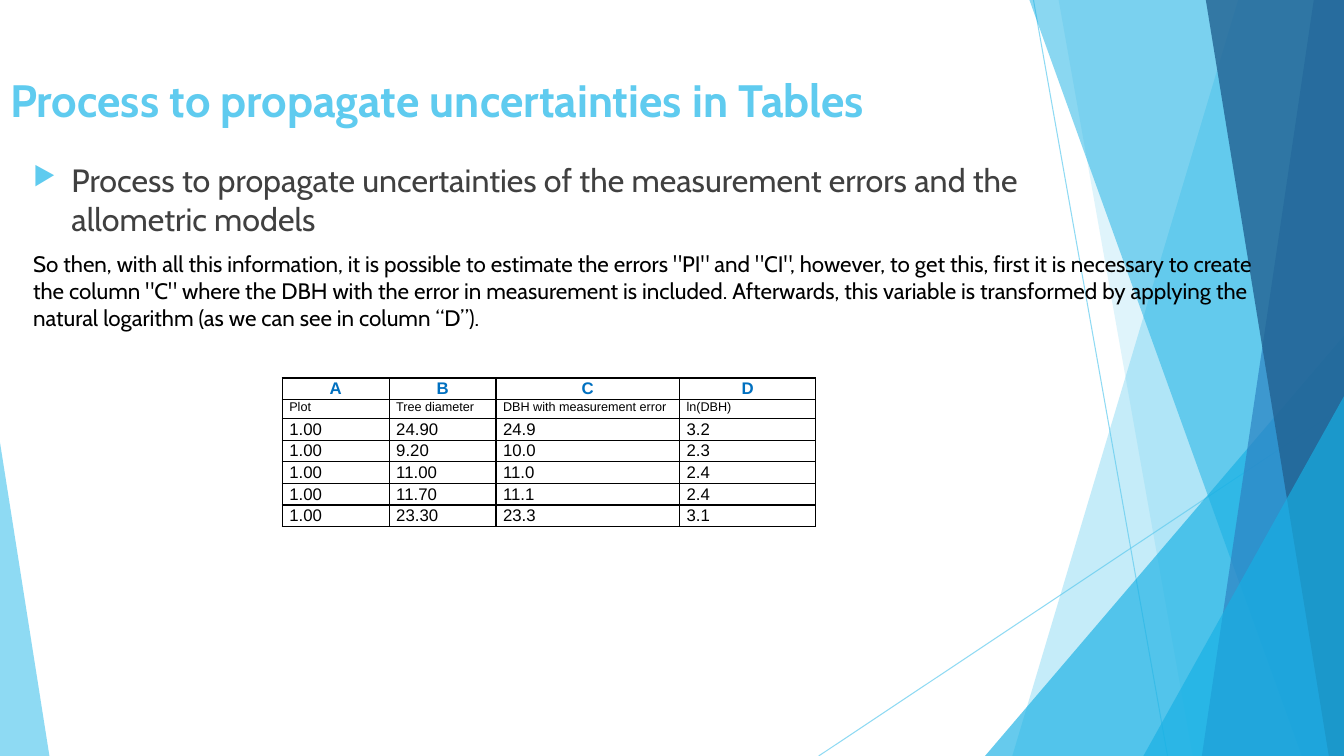
import pptx
import pptx.dml.color
import pptx.enum.shapes
import pptx.enum.text
import pptx.oxml
import pptx.oxml.ns
import pptx.util

Inches, Pt = pptx.util.Inches, pptx.util.Pt
ALIGN = pptx.enum.text.PP_ALIGN
TOP = pptx.enum.text.MSO_ANCHOR.TOP
NS = pptx.oxml.ns.nsdecls("a")
W, H = 13.33, 7.5
SKY, AQUA, BLUE, NAVY = "5FCBEF", "17B0E4", "2E83C3", "226292"

TITLE = "Process to propagate uncertainties in Tables"
BULLET = ("Process to propagate uncertainties of the measurement errors "
          "and the allometric models")
NOTE = ('So then, with all this information, it is possible to estimate the errors "PI" and "CI", '
        'however, to get this, first it is necessary to create the column "C" where the DBH with '
        'the error in measurement is included. Afterwards, this variable is transformed by '
        'applying the natural logarithm (as we can see in column “D”).')
ROWS = [
    ("A", "B", "C", "D"),
    ("Plot", "Tree diameter", "DBH with measurement error", "ln(DBH)"),
    ("1.00", "24.90", "24.9", "3.2"),
    ("1.00", "9.20", "10.0", "2.3"),
    ("1.00", "11.00", "11.0", "2.4"),
    ("1.00", "11.70", "11.1", "2.4"),
    ("1.00", "23.30", "23.3", "3.1"),
]
COL_WIDTHS = (1.06, 1.06, 1.82, 1.35)
ROW_HEIGHTS = (0.21, 0.19) + (0.21,) * 5
HEAD = {"size": Pt(12), "bold": True, "color": "0070C0"}
LABEL = {"size": Pt(9), "color": "000000"}
VALUE = {"size": Pt(12), "color": "000000"}

RAYS = [((10.25, 0), (11.58, H)), ((W, 4.03), (8.12, H))]
# Bands reach the right edge: top-left x, bottom-left x, colour, opacity in percent
BAND, TRIANGLE = "band", "triangle"
FACETS = [
    (BAND, (12.28, 10.04), SKY, 36),
    (BAND, (10.5, 11.83), SKY, 20),
    (TRIANGLE, (9.77, 3.33, 3.56, 1), AQUA, 66),
    (BAND, (10.21, 12.91), AQUA, 50),
    (BAND, (13.03, 11.92), BLUE, 70),
    (BAND, (11.96, 13.18), NAVY, 80),
    (TRIANGLE, (11.34, 3.93, 1.99, 1), AQUA, 66),
    (TRIANGLE, (0, 4.39, 0.49, 0), SKY, 70),
]


def paint(color_format, color, opacity=100):
    color_format.rgb = pptx.dml.color.RGBColor.from_string(color)
    if opacity < 100:
        clr = color_format._xFill.find(pptx.oxml.ns.qn("a:srgbClr"))
        clr.append(pptx.oxml.parse_xml(f'<a:alpha {NS} val="{opacity * 1000}"/>'))


def write(tf, text, font, **para):
    p = tf.paragraphs[0]
    for name, value in para.items():
        setattr(p, name, value)
    r = p.add_run()
    r.text = text
    for name, value in font.items():
        if name == "color":
            paint(r.font.color, value)
        else:
            setattr(r.font, name, value)
    return p


def add_ray(shapes, start, end):
    ends = [Inches(v) for v in start + end]
    line = shapes.add_connector(pptx.enum.shapes.MSO_CONNECTOR.STRAIGHT, *ends)
    line.line.width = Pt(0.75)
    paint(line.line.color, SKY, 70)
    line._element.spPr.append(pptx.oxml.parse_xml(f"<a:effectLst {NS}/>"))


def add_facet(shapes, kind, geometry, color, opacity):
    if kind == BAND:
        top_x, bottom_x = geometry
        points = [(Inches(x), Inches(y)) for x, y in
                  ((top_x, 0), (W, 0), (W, H), (bottom_x, H))]
        builder = shapes.build_freeform(*points[0])
        builder.add_line_segments(points[1:], close=True)
        sp = builder.convert_to_shape()
    else:
        left, top, width, apex = geometry
        sp = shapes.add_shape(pptx.enum.shapes.MSO_SHAPE.ISOSCELES_TRIANGLE,
                              *map(Inches, (left, top, width, H - top)))
        sp.adjustments[0] = apex
    sp.shadow.inherit = False
    sp.line.fill.background()
    sp.fill.solid()
    paint(sp.fill.fore_color, color, opacity)
    return sp


def add_text(shapes, box, text, font, **para):
    tf = shapes.add_textbox(*map(Inches, box)).text_frame
    tf.word_wrap = True
    return write(tf, text, font, **para)


def add_borders(cell):
    for i, side in enumerate("LRTB"):
        cell._tc.get_or_add_tcPr().insert(i, pptx.oxml.parse_xml(
            f'<a:ln{side} {NS} w="12700"><a:solidFill><a:srgbClr val="000000"/>'
            f'</a:solidFill></a:ln{side}>'))


def add_data_table(shapes):
    table = shapes.add_table(len(ROWS), len(COL_WIDTHS), Inches(2.8), Inches(3.75),
                             Inches(sum(COL_WIDTHS)), Inches(sum(ROW_HEIGHTS))).table
    table.first_row = table.horz_banding = False
    for col, width in zip(table.columns, COL_WIDTHS):
        col.width = Inches(width)
    for i, (row, height) in enumerate(zip(table.rows, ROW_HEIGHTS)):
        row.height = Inches(height)
        font = HEAD if i == 0 else LABEL if i == 1 else VALUE
        for cell, text in zip(row.cells, ROWS[i]):
            cell.margin_left = cell.margin_right = Inches(0.07)
            cell.margin_top = cell.margin_bottom = 0
            cell.fill.background()
            add_borders(cell)
            write(cell.text_frame, text, {"name": "Arial", **font}, line_spacing=1.07,
                  alignment=ALIGN.JUSTIFY if i else ALIGN.CENTER)


def main():
    prs = pptx.Presentation()
    prs.slide_width, prs.slide_height = Inches(W), Inches(H)
    slide = prs.slides.add_slide(prs.slide_layouts[5])
    shapes = slide.shapes

    for ray in RAYS:
        add_ray(shapes, *ray)
    for facet in FACETS:
        sp = add_facet(shapes, *facet)

    title = shapes.title
    sp._element.addnext(title._element)
    title.left, title.top, title.width, title.height = map(Inches, (0, 0.67, 10.72, 0.74))
    title.text_frame.vertical_anchor = TOP
    title.text_frame.word_wrap = True
    write(title.text_frame, TITLE,
          {"name": "Cabin", "size": Pt(32.4), "bold": True, "color": SKY}, alignment=ALIGN.LEFT)

    p = add_text(shapes, (0.23, 1.54, 11.39, 0.55), BULLET,
                 {"name": "Cabin", "size": Pt(23), "color": "404040"}, space_before=Pt(10))
    pPr = p._p.get_or_add_pPr()
    pPr.set("marL", str(Inches(0.38)))
    pPr.set("indent", str(-Inches(0.38)))
    for xml in (f'<a:buClr {NS}><a:srgbClr val="{SKY}"/></a:buClr>',
                f'<a:buSzPct {NS} val="80000"/>',
                f'<a:buChar {NS} char="▶"/>'):
        pPr.append(pptx.oxml.parse_xml(xml))

    add_text(shapes, (0.23, 2.43, 12.4, 0.91), NOTE,
             {"name": "Cabin", "size": Pt(16), "color": "000000"})
    add_data_table(shapes)
    prs.save("out.pptx")


if __name__ == "__main__":
    main()
